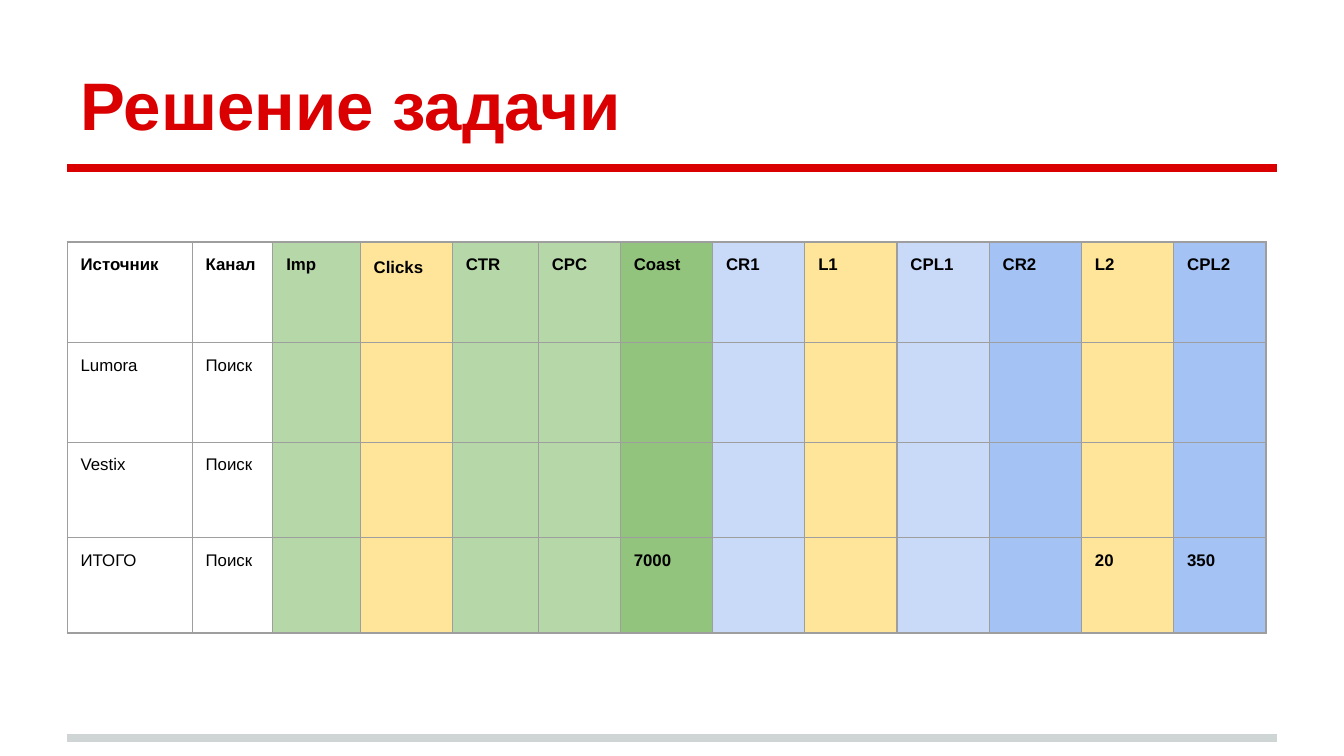
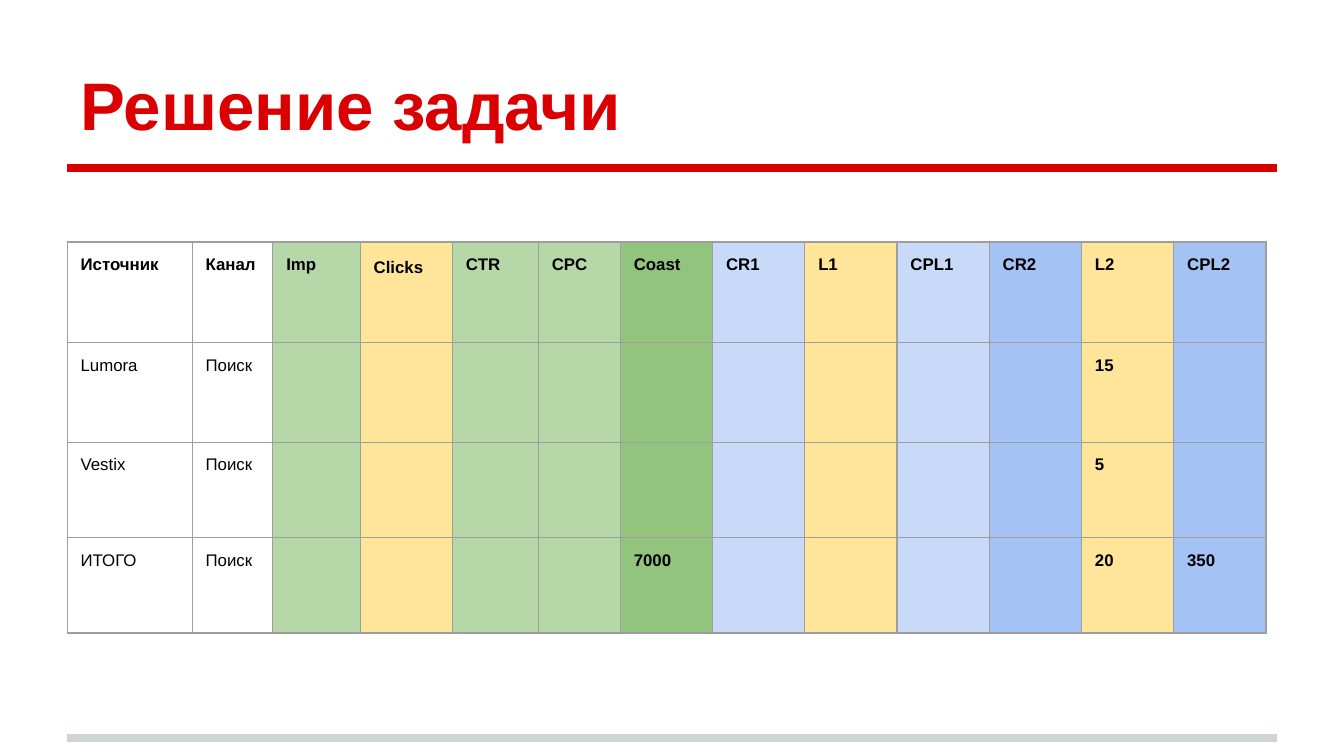
from lxml import etree
from pptx import Presentation
from pptx import util as u
from pptx.dml.color import RGBColor
from pptx.enum import shapes, text
from pptx.oxml import ns

# Theme
THEME = {
    "font": "Arial", "title_size": 36, "cell_size": 9,
    "red": "DA0002", "gray": "CFD4D4", "border": "9E9E9E", "ink": "000000",
    "green": "B6D7A8", "deep_green": "93C47D", "yellow": "FFE599",
    "blue": "C9DAF8", "deep_blue": "A4C2F4",
}
SLIDE_WIDTH = 10
LEFT, PAD, RULE_WIDTH, BORDER_WIDTH = 0.5, 0.1, 4, 0.75
TABLE_TOP, TABLE_WIDTH = 1.8, 8.92
ROW_HEIGHTS = [0.75, 0.74, 0.71, 0.71]

# Columns: heading, fill, width (None takes an equal share of the rest)
COLUMNS = [
    ("Источник", None, 0.93), ("Канал", None, 0.6),
    ("Imp", "green", 0.65), ("Сlicks", "yellow", None),
    ("CTR", "green", 0.64), ("CPC", "green", 0.61),
    ("Coast", "deep_green", None), ("CR1", "blue", None),
    ("L1", "yellow", None), ("CPL1", "blue", None),
    ("CR2", "deep_blue", None), ("L2", "yellow", None),
    ("CPL2", "deep_blue", None),
]
fixed = [width for _, _, width in COLUMNS if width]
share = (TABLE_WIDTH - sum(fixed)) / (len(COLUMNS) - len(fixed))

# Values known on each slide, by source
SOURCES = ["Lumora", "Vestix", "ИТОГО"]
TOTALS = {"Coast": "7000", "L2": "20", "CPL2": "350"}
SLIDES = [
    {"ИТОГО": TOTALS},
    {"Lumora": {"L2": "15"}, "Vestix": {"L2": "5"}, "ИТОГО": TOTALS},
]


def add_run(p, words, size, color, bold):
    r = p.add_run()
    r.text = words
    r.font.name = THEME["font"]
    r.font.size = u.Pt(size)
    r.font.bold = bold
    r.font.color.rgb = RGBColor.from_string(THEME[color])


def set_borders(cell):
    tc_pr = cell._tc.get_or_add_tcPr()
    for i, side in enumerate(("lnL", "lnR", "lnT", "lnB")):
        ln = etree.Element(ns.qn("a:" + side), w=str(u.Pt(BORDER_WIDTH)))
        fill = etree.SubElement(ln, ns.qn("a:solidFill"))
        etree.SubElement(fill, ns.qn("a:srgbClr"), val=THEME["border"])
        tc_pr.insert(i, ln)


# Widescreen 16:9
prs = Presentation()
prs.slide_width = u.Inches(SLIDE_WIDTH)
prs.slide_height = u.Inches(SLIDE_WIDTH * 9 / 16)

for values in SLIDES:
    s = prs.slides.add_slide(prs.slide_layouts[5])

    # Rules under the title and at the foot
    for y, color in ((5.49, "gray"), (1.25, "red")):
        rule = s.shapes.add_connector(
            shapes.MSO_CONNECTOR.STRAIGHT,
            u.Inches(LEFT), u.Inches(y), u.Inches(9.5), u.Inches(y))
        rule.line.color.rgb = RGBColor.from_string(THEME[color])
        rule.line.width = u.Pt(RULE_WIDTH)
        etree.SubElement(rule._element.spPr, ns.qn("a:effectLst"))

    # Title
    sp = s.shapes.title
    sp.left, sp.top = u.Inches(LEFT), u.Inches(0.23)
    sp.width, sp.height = u.Inches(9), u.Inches(0.94)
    tf = sp.text_frame
    tf.auto_size = text.MSO_AUTO_SIZE.NONE
    tf.vertical_anchor = text.MSO_ANCHOR.BOTTOM
    tf.margin_left = tf.margin_right = u.Inches(PAD)
    tf.margin_top = tf.margin_bottom = u.Inches(PAD)
    p = tf.paragraphs[0]
    p.alignment = text.PP_ALIGN.LEFT
    add_run(p, "Решение задачи", THEME["title_size"], "red", True)

    # Table grid
    table = s.shapes.add_table(
        len(ROW_HEIGHTS), len(COLUMNS), u.Inches(LEFT), u.Inches(TABLE_TOP),
        u.Inches(TABLE_WIDTH), u.Inches(sum(ROW_HEIGHTS))).table
    table.first_row = table.horz_banding = False
    for row, height in zip(table.rows, ROW_HEIGHTS):
        row.height = u.Inches(height)

    # Table cells, column by column
    for c, (heading, fill, width) in enumerate(COLUMNS):
        table.columns[c].width = u.Inches(width or share)
        if heading == "Источник":
            body = SOURCES
        elif heading == "Канал":
            body = ["Поиск"] * len(SOURCES)
        else:
            body = [values.get(name, {}).get(heading) for name in SOURCES]

        for r, words in enumerate([heading] + body):
            cell = table.cell(r, c)
            cell.margin_left = cell.margin_right = u.Inches(PAD)
            cell.margin_top = cell.margin_bottom = u.Inches(PAD)
            if fill:
                cell.fill.solid()
                cell.fill.fore_color.rgb = RGBColor.from_string(THEME[fill])
            else:
                cell.fill.background()
            set_borders(cell)
            if words:
                p = cell.text_frame.paragraphs[0]
                if words == "Сlicks":
                    p.line_spacing = 1.15
                bold = r == 0 or fill is not None
                add_run(p, words, THEME["cell_size"], "ink", bold)

prs.save("out.pptx")
